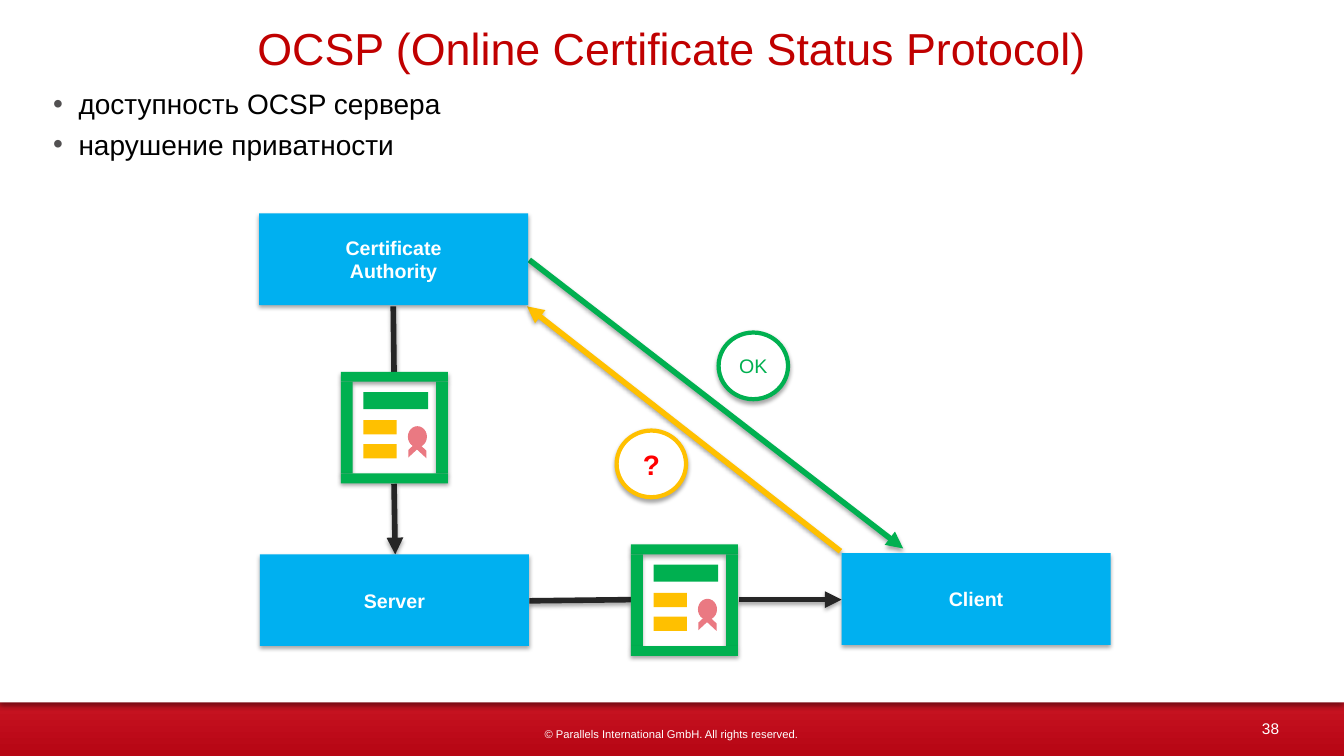
import pptx
import pptx.util
import pptx.oxml
import pptx.oxml.ns
import pptx.dml.color
import pptx.enum.shapes
import pptx.enum.text

Cm = pptx.util.Cm
Pt = pptx.util.Pt
tint = pptx.dml.color.RGBColor.from_string
kinds = pptx.enum.shapes.MSO_SHAPE
aligns = pptx.enum.text.PP_ALIGN
anchors = pptx.enum.text.MSO_ANCHOR
space = pptx.oxml.ns.nsdecls("a")
green, gold, rose, sky, dark = "00B050", "FFC000", "EA7982", "00B0F0", "262626"


def cast(item, alpha=35, blur=3, drop=1.8):
    props = item._element.spPr
    for old in props.findall(pptx.oxml.ns.qn("a:effectLst")):
        props.remove(old)
    props.append(pptx.oxml.parse_xml(
        f'<a:effectLst {space}><a:outerShdw blurRad="{Pt(blur)}" dist="{Pt(drop)}" '
        f'dir="5400000" rotWithShape="0"><a:srgbClr val="000000">'
        f'<a:alpha val="{alpha * 1000}"/></a:srgbClr></a:outerShdw></a:effectLst>'))


def draw(host, kind, place, fill, edge=None):
    shape = host.shapes.add_shape(kind, *map(Cm, place))
    shape.shadow.inherit = False
    shape.fill.solid()
    shape.fill.fore_color.rgb = tint(fill)
    if edge:
        shape.line.color.rgb = tint(edge)
        shape.line.width = Pt(3)
    else:
        shape.line.fill.background()
    return shape


deck = pptx.Presentation()
deck.slide_width, deck.slide_height = Cm(33.87), Cm(19.05)
slide = deck.slides.add_slide(deck.slide_layouts[5])

band = draw(slide, kinds.RECTANGLE, (0, 15.88, 33.87, 3.17), "B60513")
band.fill.gradient()
band.fill.gradient_angle = 90
for stop, (spot, shade) in zip(band.fill.gradient_stops, [(0, "B60513"), (0.8, "D92231")]):
    stop.position = spot
    stop.color.rgb = tint(shade)
sheet = draw(slide, kinds.RECTANGLE, (0, 0, 33.87, 17.7), "FFFFFF")
cast(sheet, 40, 4, 3)

title = slide.shapes.title
slide.shapes._spTree.append(title._element)
title.left, title.top, title.width, title.height = map(Cm, (5.05, 0.51, 23.77, 1.37))
page = slide.shapes.add_textbox(*map(Cm, (31.32, 17.96, 1.4, 0.79)))
foot = slide.shapes.add_textbox(*map(Cm, (13, 18.34, 7.85, 0.33)))
body = slide.shapes.add_textbox(*map(Cm, (1.09, 2.06, 31.7, 14.86)))

links = [
    (9.91, 7.72, 9.93, 9.37, dark, False),
    (9.93, 12.19, 9.96, 13.97, dark, True),
    (13.34, 15.14, 15.9, 15.11, dark, False),
    (18.62, 15.11, 21.21, 15.11, dark, True),
    (21.18, 13.89, 13.28, 7.72, gold, True),
    (13.34, 6.55, 22.76, 13.82, green, True),
]
for *ends, shade, head in links:
    link = slide.shapes.add_connector(pptx.enum.shapes.MSO_CONNECTOR.STRAIGHT, *map(Cm, ends))
    link.line.color.rgb = tint(shade)
    link.line.width = Pt(4)
    if head:
        link.line._get_or_add_ln().append(
            pptx.oxml.parse_xml(f'<a:tailEnd {space} type="triangle"/>'))
    cast(link)

texts = [
    (title, ["OCSP (Online Certificate Status Protocol)"], 32, "C00000", False, 0),
    (page, ["38"], 11, "FFFFFF", False, 0.13),
    (foot, ["© Parallels International GmbH. All rights reserved."], 8, "FFFFFF", False, 0),
    (body, ["доступность OCSP сервера", "нарушение приватности"], 20, "000000", False, 0.13),
]
nodes = [
    (21.21, 13.94, ["Client"]),
    (6.53, 5.38, ["Certificate", "Authority"]),
    (6.55, 13.97, ["Server"]),
]
for left, top, lines in nodes:
    node = draw(slide, kinds.RECTANGLE, (left, top, 6.78, 2.31), sky)
    cast(node)
    texts.append((node, lines, 14, "FFFFFF", True, 0.13))

marks = [
    (15.54, 10.85, gold, "?", 20, "FF0000", True),
    (18.11, 8.38, green, "OK", 14, green, False),
]
for left, top, edge, word, size, shade, bold in marks:
    mark = draw(slide, kinds.OVAL, (left, top, 1.75, 1.68), "FFFFFF", edge)
    cast(mark)
    texts.append((mark, [word], size, shade, bold, 0.13))

parts = [
    (kinds.RECTANGLE, 0.57, 0.51, 1.63, 0.43, green),
    (kinds.RECTANGLE, 0.57, 1.22, 0.84, 0.36, gold),
    (kinds.RECTANGLE, 0.57, 1.82, 0.84, 0.36, gold),
    (kinds.OVAL, 1.69, 1.37, 0.48, 0.53, rose),
    (kinds.DIAGONAL_STRIPE, 1.7, 1.78, 0.41, 0.38, rose),
    (kinds.DIAGONAL_STRIPE, 1.75, 1.8, 0.41, 0.38, rose),
]
rails = [(0, 0, 2.7, 0.25), (2.4, 0.25, 0.3, 2.31), (0, 0.25, 0.3, 2.31), (0, 2.56, 2.7, 0.25)]
for left, top in [(8.59, 9.37), (15.9, 13.72)]:
    badge = slide.shapes.add_group_shape()
    for kind, x, y, wide, high, shade in parts:
        part = draw(badge, kind, (left + x, top + y, wide, high), shade)
    part._element.spPr.xfrm.set("flipH", "1")
    for x, y, wide, high in rails:
        cast(draw(badge, kinds.RECTANGLE, (left + x, top + y, wide, high), green))

for shape, lines, size, shade, bold, inset in texts:
    frame = shape.text_frame
    looks = {
        "word_wrap": True,
        "auto_size": pptx.enum.text.MSO_AUTO_SIZE.NONE,
        "vertical_anchor": anchors.TOP if shape in (body, foot) else anchors.MIDDLE,
        "margin_left": Cm(0.25 if shape in (body, foot) else inset),
        "margin_right": Cm(0.25 if shape in (body, foot) else inset),
        "margin_top": Cm(inset),
        "margin_bottom": Cm(inset),
    }
    for name, value in looks.items():
        setattr(frame, name, value)
    for rank, line in enumerate(lines):
        para = frame.add_paragraph() if rank else frame.paragraphs[0]
        para.alignment = aligns.LEFT if shape is body else aligns.CENTER
        if shape is body:
            if rank:
                para.space_before = Pt(5)
            props = para._p.get_or_add_pPr()
            props.set("marL", str(Cm(0.64)))
            props.set("indent", str(-Cm(0.64)))
            for bit in (f'<a:buClr {space}><a:srgbClr val="525051"/></a:buClr>',
                        f'<a:buFont {space} typeface="Arial"/>',
                        f'<a:buChar {space} char="•"/>'):
                props.append(pptx.oxml.parse_xml(bit))
        run = para.add_run()
        run.text = line
        for name, value in {"name": "Arial", "size": Pt(size), "bold": bold}.items():
            setattr(run.font, name, value)
        run.font.color.rgb = tint(shade)

deck.save("out.pptx")
